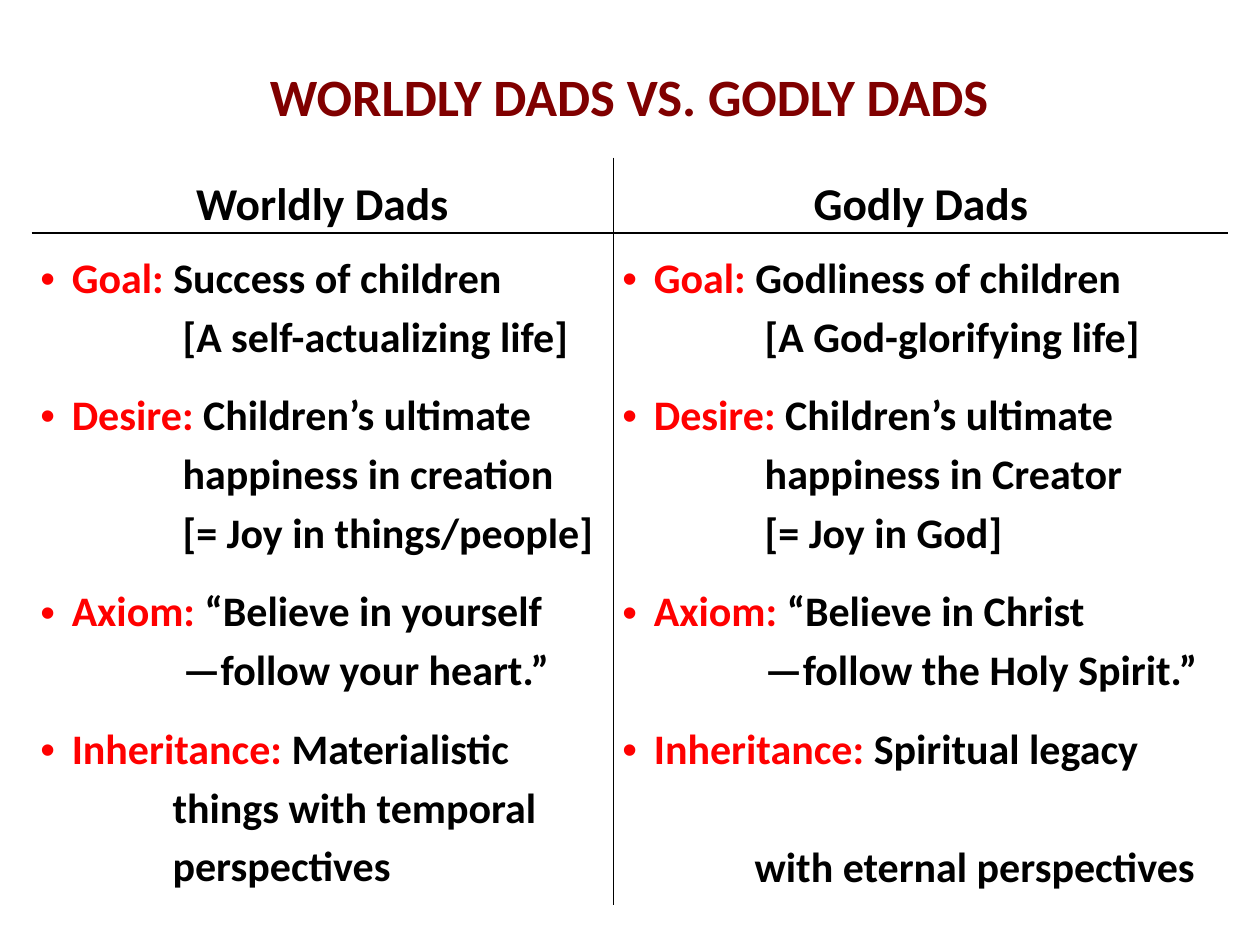
from lxml.etree import SubElement
from pptx import Presentation
from pptx.dml.color import RGBColor
from pptx.enum.text import MSO_ANCHOR, PP_ALIGN
from pptx.oxml import parse_xml
from pptx.oxml.ns import nsdecls, qn
from pptx.util import Inches, Pt

BLACK, RED, MAROON = "000000", "FF0000", "800000"
LINE = 33.7
DEEP, NEAR = 1.13, 1.05

WORLD = [
    ("Goal: ", "Success of children", ["[A self-actualizing life]"], DEEP, 0),
    ("Desire: ", "Children’s ultimate",
     ["happiness in creation", "[= Joy in things/people]"], DEEP, 0),
    ("Axiom: ", "“Believe in yourself", ["—follow your heart.”"], DEEP, 0),
    ("Inheritance: ", "Materialistic",
     ["things with temporal", "perspectives"], NEAR, 0),
]
GODLY = [
    ("Goal: ", "Godliness of children", ["[A God-glorifying life]"], DEEP, 0),
    ("Desire: ", "Children’s ultimate",
     ["happiness in Creator", "[= Joy in God]"], DEEP, 0),
    ("Axiom: ", "“Believe in Christ", ["—follow the Holy Spirit.”"], DEEP, 0),
    ("Inheritance: ", "Spiritual legacy",
     ["with eternal perspectives"], NEAR, LINE),
]


def paint(font, color):
    font.color.rgb = RGBColor.from_string(color)


def write(para, text, size, color):
    run = para.add_run()
    run.text = text
    font = run.font
    font.name, font.size, font.bold = "Calibri", Pt(size), True
    paint(font, color)


def indent(para, left, hang=0.0):
    props = para._p.get_or_add_pPr()
    props.set("marL", str(Inches(left)))
    props.set("indent", str(Inches(hang)))
    return props


def border(cell, sides):
    props = cell._tc.get_or_add_tcPr()
    for spot, side in enumerate("LRTB"):
        fill = (f'<a:solidFill><a:srgbClr val="{BLACK}"/></a:solidFill>'
                if side in sides else "<a:noFill/>")
        props.insert(spot, parse_xml(
            f'<a:ln{side} {nsdecls("a")} w="{Pt(1)}">{fill}</a:ln{side}>'))


def setup(cell, sides, top=0.0):
    cell.fill.background()
    cell.margin_left = cell.margin_right = Inches(0.07)
    cell.margin_top, cell.margin_bottom = Inches(top), 0
    border(cell, sides)


def head(cell, text, sides):
    setup(cell, sides)
    cell.vertical_anchor = MSO_ANCHOR.BOTTOM
    para = cell.text_frame.paragraphs[0]
    para.alignment, para.line_spacing = PP_ALIGN.CENTER, 1.15
    write(para, text, 26, BLACK)


def points(cell, items, sides):
    setup(cell, sides, 0.1)
    frame = cell.text_frame
    for spot, (label, lead, rest, left, gap) in enumerate(items):
        para = frame.add_paragraph() if spot else frame.paragraphs[0]
        props = indent(para, 0.25, -0.25)
        SubElement(props, qn("a:buFont")).set("typeface", "Arial")
        SubElement(props, qn("a:buChar")).set("char", "•")
        para.line_spacing = 1.15
        if spot:
            para.space_before = Pt(11.2)
        write(para, label, 24, RED)
        write(para, lead, 24, BLACK)
        for text in rest:
            para = frame.add_paragraph()
            indent(para, left)
            para.line_spacing, para.space_before = 1.15, Pt(gap)
            write(para, text, 24, BLACK)


def title(slide, text, left, top, width, height):
    shape = slide.shapes.title
    shape.left, shape.top = Inches(left), Inches(top)
    shape.width, shape.height = Inches(width), Inches(height)
    frame = shape.text_frame
    frame.vertical_anchor = MSO_ANCHOR.MIDDLE
    para = frame.paragraphs[0]
    para.alignment = PP_ALIGN.CENTER
    write(para, text, 30, MAROON)


def versus(slide, left, top, width, height):
    grid = slide.shapes.add_table(2, 2, Inches(left), Inches(top),
                                  Inches(width), Inches(height)).table
    grid.first_row = grid.horz_banding = False
    split, bar = 4.62, 0.6
    for col, size in zip(grid.columns, (split, width - split)):
        col.width = Inches(size)
    for row, size in zip(grid.rows, (bar, height - bar)):
        row.height = Inches(size)
    sets = (("Worldly Dads", WORLD, "R"), ("Godly Dads", GODLY, "L"))
    for col, (name, items, side) in enumerate(sets):
        head(grid.cell(0, col), name, side + "B")
        points(grid.cell(1, col), items, side + "T")


def main():
    deck = Presentation()
    deck.slide_width, deck.slide_height = Inches(10), Inches(7.5)
    slide = deck.slides.add_slide(deck.slide_layouts[5])
    title(slide, "WORLDLY DADS VS. GODLY DADS", 0.33, 0.42, 9.33, 0.67)
    versus(slide, 0.25, 1.25, 9.5, 5.93)
    deck.save("out.pptx")


if __name__ == "__main__":
    main()
